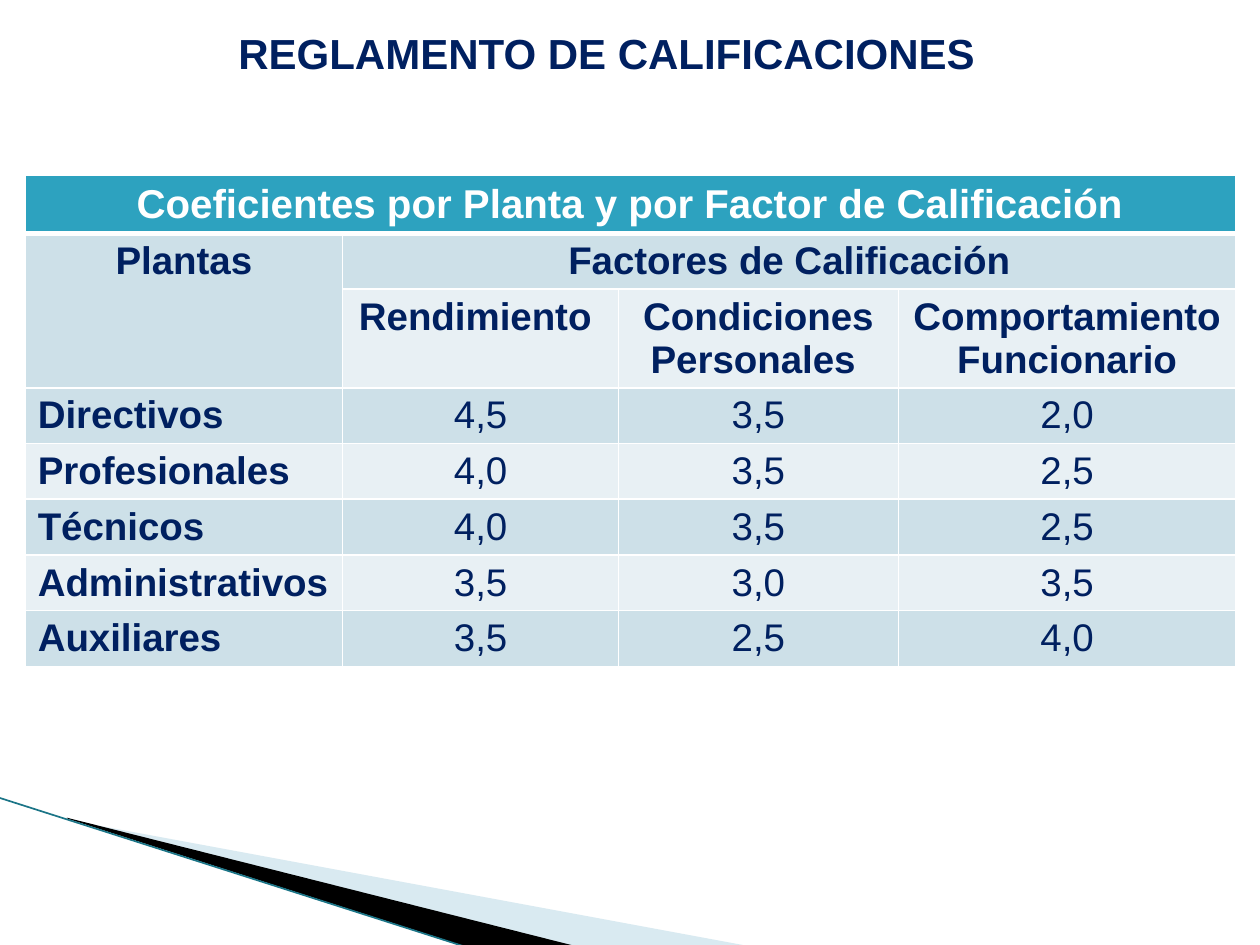
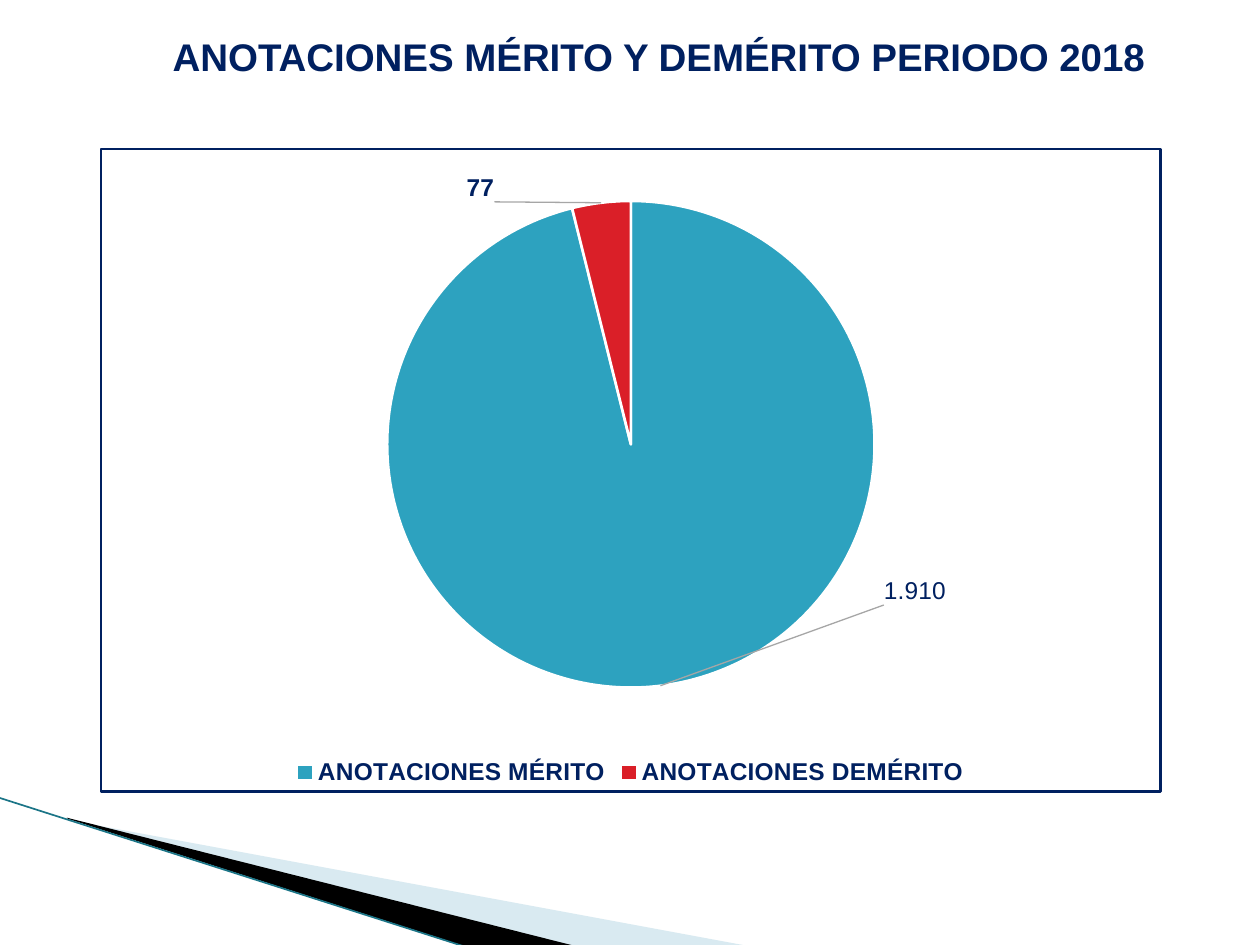
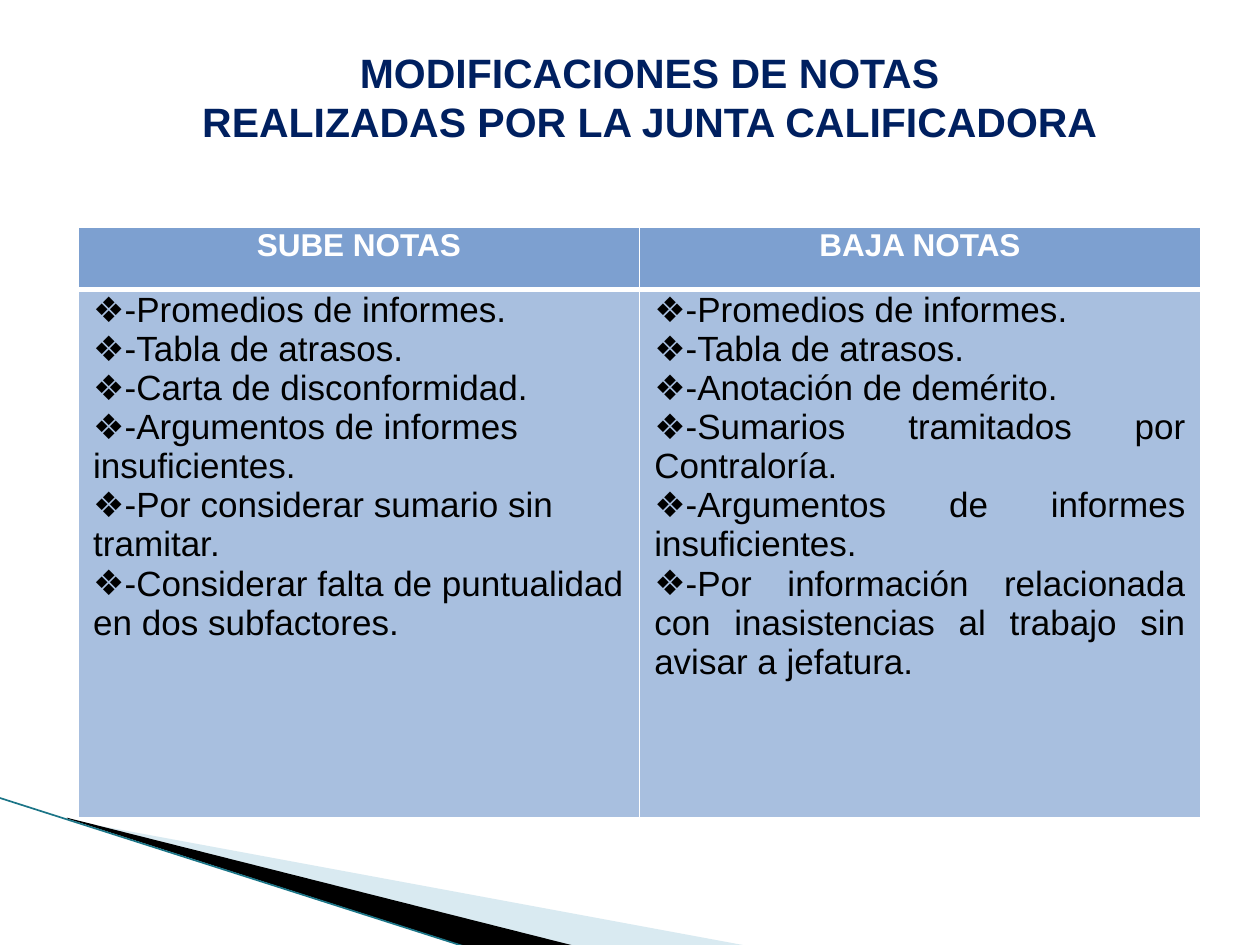
from lxml.etree import SubElement
from pptx import Presentation
from pptx.chart.data import CategoryChartData
from pptx.dml.color import RGBColor
from pptx.enum.chart import XL_CHART_TYPE, XL_LABEL_POSITION, XL_LEGEND_POSITION
from pptx.enum.shapes import MSO_CONNECTOR
from pptx.enum.text import MSO_ANCHOR, MSO_AUTO_SIZE, PP_ALIGN
from pptx.oxml import parse_xml
from pptx.oxml.ns import nsdecls, qn
from pptx.util import Pt

NAVY, WHITE, BLACK, TEAL, RED = "002060", "FFFFFF", "000000", "2DA2BF", "DA1F28"
BANDS = ["CDE0E8", "E8F0F4"]
HEAD, BODY = "7DA0D0", "A8BFDF"
MID = PP_ALIGN.CENTER
GRADES = [
    ["Directivos", "4,5", "3,5", "2,0"],
    ["Profesionales", "4,0", "3,5", "2,5"],
    ["Técnicos", "4,0", "3,5", "2,5"],
    ["Administrativos", "3,5", "3,0", "3,5"],
    ["Auxiliares", "3,5", "2,5", "4,0"],
]
RAISE = [
    "-Promedios de informes.",
    "-Tabla de atrasos.",
    "-Carta de disconformidad.",
    "-Argumentos de informes insuficientes.",
    "-Por considerar sumario sin tramitar.",
    "-Considerar falta de puntualidad en dos subfactores.",
]
LOWER = [
    "-Promedios de informes.",
    "-Tabla de atrasos.",
    "-Anotación de demérito.",
    "-Sumarios tramitados por Contraloría.",
    "-Argumentos de informes insuficientes.",
    "-Por información relacionada con inasistencias al trabajo sin avisar a jefatura.",
]


def tint(color):
    """Turn a hex string into a colour."""
    return RGBColor.from_string(color)


def apply(item, **vals):
    """Set each given attribute on the item."""
    for name, val in vals.items():
        setattr(item, name, val)


def style(font, size, color=NAVY, bold=True):
    """Format a font in Arial."""
    apply(font, name="Arial", size=Pt(size), bold=bold)
    font.color.rgb = tint(color)


def paint(fill, color):
    """Fill with one plain colour."""
    fill.solid()
    fill.fore_color.rgb = tint(color)


def wedge(shapes, points, color, alpha=100):
    """Draw a filled outline without a border."""
    spots = [(Pt(x), Pt(y)) for x, y in points]
    pen = shapes.build_freeform(*spots[0])
    pen.add_line_segments(spots[1:])
    shape = pen.convert_to_shape()
    shape.shadow.inherit = False
    paint(shape.fill, color)
    shape.line.fill.background()
    if alpha < 100:
        tone = shape.element.spPr.find(".//" + qn("a:srgbClr"))
        SubElement(tone, qn("a:alpha"), val=str(alpha * 1000))
    return shape


def corner(slide):
    """Place the corner wedges on the layout of the slide."""
    shapes = slide.shapes
    pale = wedge(shapes, [(39.6, 468.7), (428.4, 540.7), (328.3, 540.7), (39.6, 468)], "A0CBDC", 40)
    dark = wedge(shapes, [(38.2, 467.3), (329, 540.7), (267.8, 541.4), (38.9, 468)], BLACK)
    edge = shapes.add_connector(MSO_CONNECTOR.STRAIGHT, Pt(-0.7), Pt(455.8), Pt(267.1), Pt(541.4))
    edge.line.color.rgb = tint("1B7587")
    edge.line.width = Pt(0.95)
    SubElement(edge.element.spPr, qn("a:effectLst"))
    for part in (pale, dark, edge):
        slide.slide_layout.shapes.element.append(part.element)


def head(slide, text, box, size):
    """Fill and place the slide title."""
    title = slide.shapes.title
    left, top, width, height = map(Pt, box)
    apply(title, left=left, top=top, width=width, height=height)
    frame = title.text_frame
    frame.text = text
    apply(frame, word_wrap=True, auto_size=MSO_AUTO_SIZE.NONE, vertical_anchor=MSO_ANCHOR.MIDDLE)
    line = frame.paragraphs[0]
    line.alignment = MID
    for run in line.runs:
        style(run.font, size)


def grid(slide, left, top, cols, rows):
    """Add a table with white borders, thick below the first row."""
    table = slide.shapes.add_table(
        len(rows), len(cols), Pt(left), Pt(top), Pt(sum(cols)), Pt(sum(rows))).table
    table.horz_banding = False
    for col, width in zip(table.columns, cols):
        col.width = Pt(width)
    for i, (row, height) in enumerate(zip(table.rows, rows)):
        row.height = Pt(height)
        for cell in row.cells:
            props = cell._tc.get_or_add_tcPr()
            for side in "LRTB":
                thick = (i, side) in [(0, "B"), (1, "T")]
                line = SubElement(props, qn("a:ln" + side), w=str(Pt(3 if thick else 1)))
                fill = SubElement(line, qn("a:solidFill"))
                SubElement(fill, qn("a:srgbClr"), val=WHITE)
    return table


def put(cell, lines, fill, size, color=NAVY, bold=True, align=MID, bullet=None):
    """Write paragraphs into a filled table cell."""
    paint(cell.fill, fill)
    cell.text = "\n".join(lines)
    for para in cell.text_frame.paragraphs:
        if bullet:
            props = para._p.get_or_add_pPr()
            apply_zero = {"marL": "0", "indent": "0"}
            props.attrib.update(apply_zero)
            SubElement(props, qn("a:buFont"), typeface="Arial")
            SubElement(props, qn("a:buChar"), char=bullet)
        para.alignment = align
        for run in para.runs:
            style(run.font, size, color, bold)


def inset(cell, side, top, base):
    """Set the cell margins."""
    apply(cell, margin_left=Pt(side), margin_right=Pt(side),
          margin_top=Pt(top), margin_bottom=Pt(base))


def place(parent, index, **spots):
    """Give a chart part a manual layout."""
    for old in parent.findall(qn("c:layout")):
        parent.remove(old)
    layout = parse_xml(f"<c:layout {nsdecls('c')}><c:manualLayout/></c:layout>")
    for name, val in spots.items():
        SubElement(layout[0], qn("c:" + name), val=str(val))
    parent.insert(index, layout)


def line_xml(color, width):
    """Return the XML of a plain line."""
    return (f'<a:ln w="{Pt(width)}"><a:solidFill><a:srgbClr val="{color}"/>'
            "</a:solidFill></a:ln>")


def pie(slide, box, cats, vals, colors):
    """Add the framed pie chart with moved labels."""
    data = CategoryChartData()
    data.categories = cats
    data.add_series("Series 1", vals)
    chart = slide.shapes.add_chart(XL_CHART_TYPE.PIE, *map(Pt, box), data).chart
    apply(chart, has_title=False, has_legend=True)
    style(chart.font, 14, bold=False)
    apply(chart.legend, position=XL_LEGEND_POSITION.BOTTOM, include_in_layout=False)
    style(chart.legend.font, 14)
    plot = chart.plots[0]
    plot.vary_by_categories = True
    points = plot.series[0].points
    for i, color in enumerate(colors):
        form = points[i].format
        paint(form.fill, color)
        form.line.color.rgb = tint(WHITE)
        form.line.width = Pt(1.5)
    merit, fault = points[0].data_label, points[1].data_label
    merit.text_frame.text = "1.910"
    style(merit.text_frame.paragraphs[0].runs[0].font, 14, bold=False)
    style(fault.font, 14)
    for label in (merit, fault):
        label.position = XL_LABEL_POSITION.OUTSIDE_END
    root = chart.element
    shifts = [(0.21, -0.18), (-0.1, 0.01)]
    for part, (x, y) in zip(root.xpath(".//c:dLbl"), shifts):
        place(part, 1, x=x, y=y)
    place(root.xpath(".//c:plotArea")[0], 0, layoutTarget="inner", xMode="edge",
          yMode="edge", x=0.27, y=0.08, w=0.46, h=0.76)
    space = nsdecls("c", "a")
    for lead in root.xpath(".//c:ser/c:dLbls/c:showLeaderLines"):
        lead.addnext(parse_xml(
            f"<c:leaderLines {space}><c:spPr>{line_xml('A6A6A6', 0.75)}</c:spPr></c:leaderLines>"))
    root.find(qn("c:chart")).addnext(parse_xml(
        f'<c:spPr {space}><a:solidFill><a:srgbClr val="{WHITE}"/></a:solidFill>'
        f"{line_xml(NAVY, 1.5)}</c:spPr>"))


def scores(slide):
    """Build the table of coefficients."""
    table = grid(slide, 14.4, 100.3, [181.44, 157.7, 159.8, 193], [31.75] * 2 + [56.4] + [31.75] * 5)
    for row in range(8):
        for col in range(4):
            paint(table.cell(row, col).fill, BANDS[(row + 1) % 2])
    for start, end in [((0, 0), (0, 3)), ((1, 0), (2, 0)), ((1, 1), (1, 3))]:
        table.cell(*start).merge(table.cell(*end))
    put(table.cell(0, 0), ["Coeficientes por Planta y por Factor de Calificación"], TEAL, 23, WHITE)
    put(table.cell(1, 0), ["Plantas"], BANDS[0], 22)
    put(table.cell(1, 1), ["Factores de Calificación"], BANDS[0], 22)
    names = ["Rendimiento ", "Condiciones Personales ", "Comportamiento Funcionario"]
    for col, name in enumerate(names, 1):
        put(table.cell(2, col), [name], BANDS[1], 22)
    for row, texts in enumerate(GRADES, 3):
        for col, text in enumerate(texts):
            first = col == 0
            put(table.cell(row, col), [text], BANDS[(row + 1) % 2], 22,
                bold=first, align=PP_ALIGN.LEFT if first else MID)


def changes(slide):
    """Build the table of reasons for grade changes."""
    table = grid(slide, 44.8, 129.6, [320.6] * 2, [36, 301.5])
    parts = [("SUBE NOTAS", RAISE, PP_ALIGN.LEFT), ("BAJA NOTAS", LOWER, PP_ALIGN.JUSTIFY)]
    for col, (name, items, align) in enumerate(parts):
        top, base = table.cell(0, col), table.cell(1, col)
        inset(top, 0.72, 0.72, 0)
        inset(base, 8.5, 0.72, 5.8)
        put(top, [name], HEAD, 18, WHITE)
        put(base, items, BODY, 20, BLACK, False, align, "❖")


def main():
    """Build and save the three slides."""
    deck = Presentation()
    apply(deck, slide_width=Pt(720), slide_height=Pt(540))
    layout = deck.slide_layouts[5]
    first, second, third = [deck.slides.add_slide(layout) for _ in range(3)]
    corner(first)
    head(first, "REGLAMENTO DE CALIFICACIONES ", (0, 0, 700, 60.5), 24)
    scores(first)
    head(second, "ANOTACIONES MÉRITO Y DEMÉRITO PERIODO 2018", (33, 15, 687, 34), 22)
    pie(second, (57, 84.3, 607, 368.6), ["ANOTACIONES MÉRITO", "ANOTACIONES DEMÉRITO"],
        [1910, 77], [TEAL, RED])
    head(third, "MODIFICACIONES DE NOTAS\vREALIZADAS POR LA JUNTA CALIFICADORA",
         (78.5, 26, 585.4, 58.3), 23.4)
    changes(third)
    deck.save("out.pptx")


if __name__ == "__main__":
    main()
